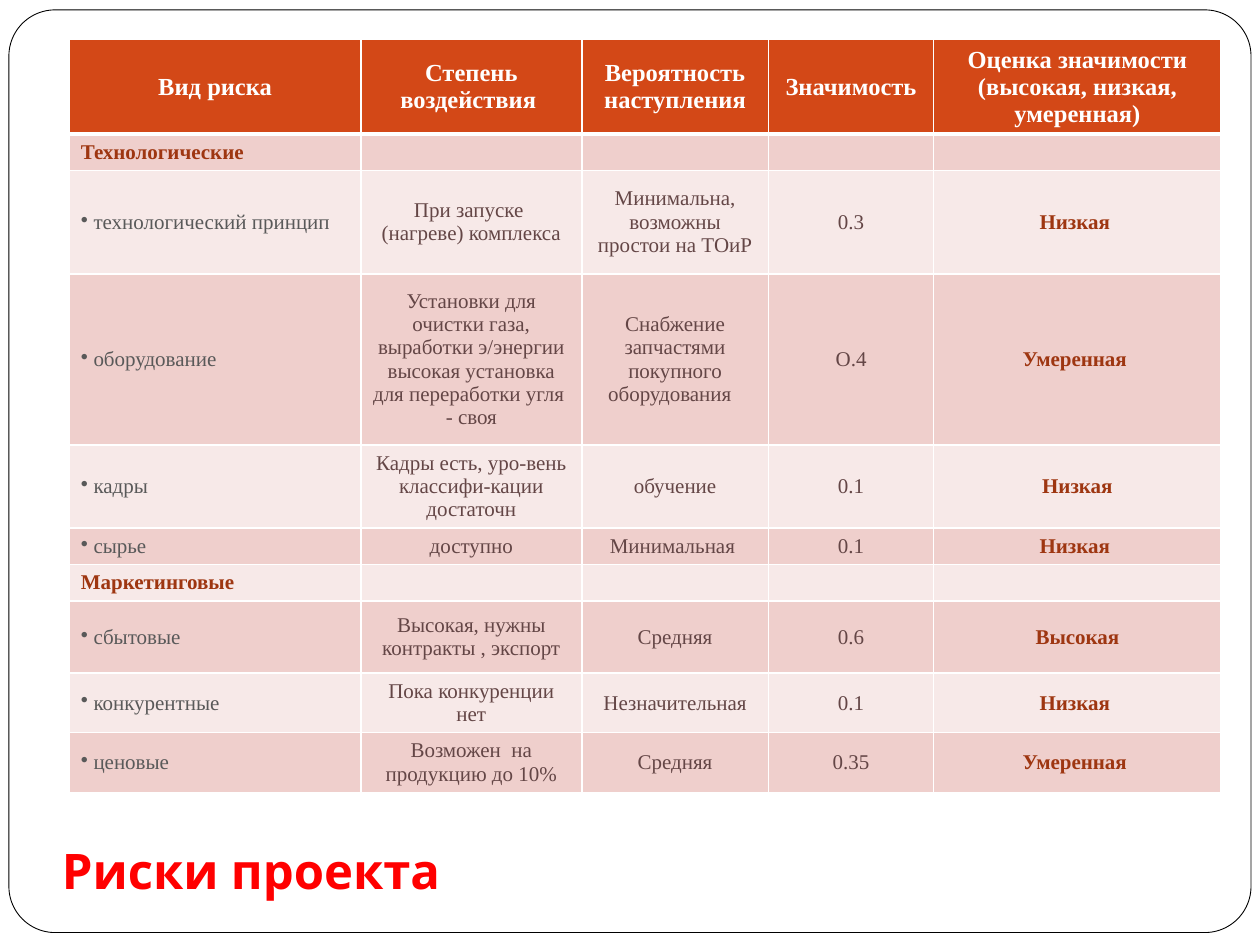
"""Builds the project risk slide."""
from dataclasses import dataclass

from lxml import etree
from pptx import Presentation
from pptx.dml.color import RGBColor
from pptx.enum import shapes, text
from pptx.oxml.ns import qn
from pptx.util import Cm, Pt


@dataclass(frozen=True)
class Theme:
    """Colours, fonts and type sizes."""
    white: str = "FFFFFF"
    frame: str = "000000"
    header: str = "D34817"
    bands: tuple = ("EFCFCC", "F7E9E8")
    accent: str = "9E3611"
    risk: str = "595959"
    body: str = "644646"
    title: str = "FF0000"
    table_font: str = "Times New Roman"
    title_font: str = "Karla"
    header_size: int = 14
    body_size: int = 12
    title_size: int = 28


@dataclass(frozen=True)
class Box:
    """A region in centimetres."""
    left: float
    top: float
    width: float
    height: float

    def lengths(self):
        """Return the region as slide lengths."""
        return Cm(self.left), Cm(self.top), Cm(self.width), Cm(self.height)


THEME = Theme()
COLUMN_SHARES = (5.87, 4.45, 3.76, 3.33, 5.79)
HEADINGS = ("Вид риска", "Степень воздействия ", "Вероятность наступления",
            "Значимость", "Оценка значимости (высокая, низкая, умеренная)")
RISKS = (
    (0.74, "Технологические"),
    (2.08, "технологический принцип", "При запуске  (нагреве) комплекса",
     "Минимальна, возможны простои на ТОиР", "0.3", "Низкая "),
    (3.45, "оборудование",
     "Установки для очистки газа, выработки э/энергии высокая установка "
     "для переработки угля  - своя",
     "Снабжение запчастями покупного оборудования  ", "О.4", "Умеренная "),
    (1.45, "кадры", "Кадры есть, уро-вень классифи-кации достаточн",
     "обучение", "0.1", "Низкая"),
    (0.74, "сырье", "доступно", "Минимальная ", "0.1", "Низкая "),
    (0.74, "Маркетинговые"),
    (1.45, "сбытовые", "Высокая, нужны контракты , экспорт", "Средняя", "0.6", "Высокая"),
    (1.17, "конкурентные", "Пока конкуренции нет", "Незначительная", "0.1", "Низкая "),
    (1.17, "ценовые", "Возможен  на продукцию до 10%", "Средняя", "0.35", "Умеренная "),
)
HEADER_HEIGHT = 1.7


def style_font(font, name, size, color, bold):
    """Set the face, size, colour and weight of a font."""
    font.name, font.size, font.bold = name, Pt(size), bold
    font.color.rgb = RGBColor.from_string(color)


def draw_borders(cell, row):
    """Rule a cell in white, thicker beneath the header."""
    widths = {"L": 1, "R": 1, "T": 3 if row == 1 else 1, "B": 3 if row == 0 else 1}
    properties = cell._tc.get_or_add_tcPr()
    for side, points in widths.items():
        line = etree.SubElement(properties, qn(f"a:ln{side}"), w=str(Pt(points)))
        fill = etree.SubElement(line, qn("a:solidFill"))
        etree.SubElement(fill, qn("a:srgbClr"), val=THEME.white)


def fill_cell(cell, row, wording, color, size, bold, centred, bulleted=False):
    """Write and style one table cell."""
    draw_borders(cell, row)
    cell.fill.solid()
    background = THEME.bands[(row - 1) % 2] if row else THEME.header
    cell.fill.fore_color.rgb = RGBColor.from_string(background)
    cell.vertical_anchor = text.MSO_ANCHOR.MIDDLE
    cell.margin_left = cell.margin_right = Cm(0.23)
    cell.margin_top = cell.margin_bottom = Cm(0.13)
    paragraph = cell.text_frame.paragraphs[0]
    paragraph.alignment = text.PP_ALIGN.CENTER if centred else text.PP_ALIGN.LEFT
    if bulleted:
        etree.SubElement(paragraph._p.get_or_add_pPr(), qn("a:buChar"), char="•")
        wording = " " + wording
    style_font(paragraph.font, THEME.table_font, size, color, bold)
    if wording:
        paragraph.add_run().text = wording
    else:
        etree.SubElement(paragraph._p, qn("a:endParaRPr"), sz=str(size * 100))


def add_risk_table(slide, box):
    """Place the table of risks grouped by kind."""
    table = slide.shapes.add_table(
        len(RISKS) + 1, len(HEADINGS), *box.lengths()).table
    for column, share in zip(table.columns, COLUMN_SHARES):
        column.width = Cm(box.width * share / sum(COLUMN_SHARES))
    table.rows[0].height = Cm(HEADER_HEIGHT)
    for column, heading in enumerate(HEADINGS):
        fill_cell(table.cell(0, column), 0, heading, THEME.white,
                  THEME.header_size, True, True)
    last = len(HEADINGS) - 1
    for row, (height, *wordings) in enumerate(RISKS, start=1):
        table.rows[row].height = Cm(height)
        is_group = len(wordings) == 1
        for column in range(len(HEADINGS)):
            wording = wordings[column] if column < len(wordings) else ""
            emphatic = is_group or column == last
            plain = THEME.body if column else THEME.risk
            fill_cell(table.cell(row, column), row, wording,
                      THEME.accent if emphatic else plain, THEME.body_size,
                      emphatic, column > 0, column == 0 and not is_group)


def add_frame(slide, box):
    """Place the rounded outline around the slide."""
    frame = slide.shapes.add_shape(
        shapes.MSO_SHAPE.ROUNDED_RECTANGLE, *box.lengths())
    frame.adjustments[0] = 0.05
    frame.shadow.inherit = False
    frame.fill.solid()
    frame.fill.fore_color.rgb = RGBColor.from_string(THEME.white)
    frame.line.color.rgb = RGBColor.from_string(THEME.frame)
    frame.line.width = Pt(0.5)


def add_title(slide, box):
    """Place the slide title at the bottom of its region."""
    frame = slide.shapes.add_textbox(*box.lengths()).text_frame
    frame.word_wrap = True
    frame.vertical_anchor = text.MSO_ANCHOR.BOTTOM
    paragraph = frame.paragraphs[0]
    paragraph.text = "Риски проекта"
    style_font(paragraph.font, THEME.title_font, THEME.title_size, THEME.title, True)


def main():
    """Build and save the presentation."""
    deck = Presentation()
    deck.slide_width, deck.slide_height = Cm(25.4), Cm(19.05)
    slide = deck.slides.add_slide(deck.slide_layouts[6])
    add_frame(slide, Box(0.18, 0.2, 25.04, 18.6))
    add_risk_table(slide, Box(1.4, 0.8, 23.22, 15.98))
    add_title(slide, Box(1, 16.28, 23.42, 1.98))
    deck.save("out.pptx")


if __name__ == "__main__":
    main()
